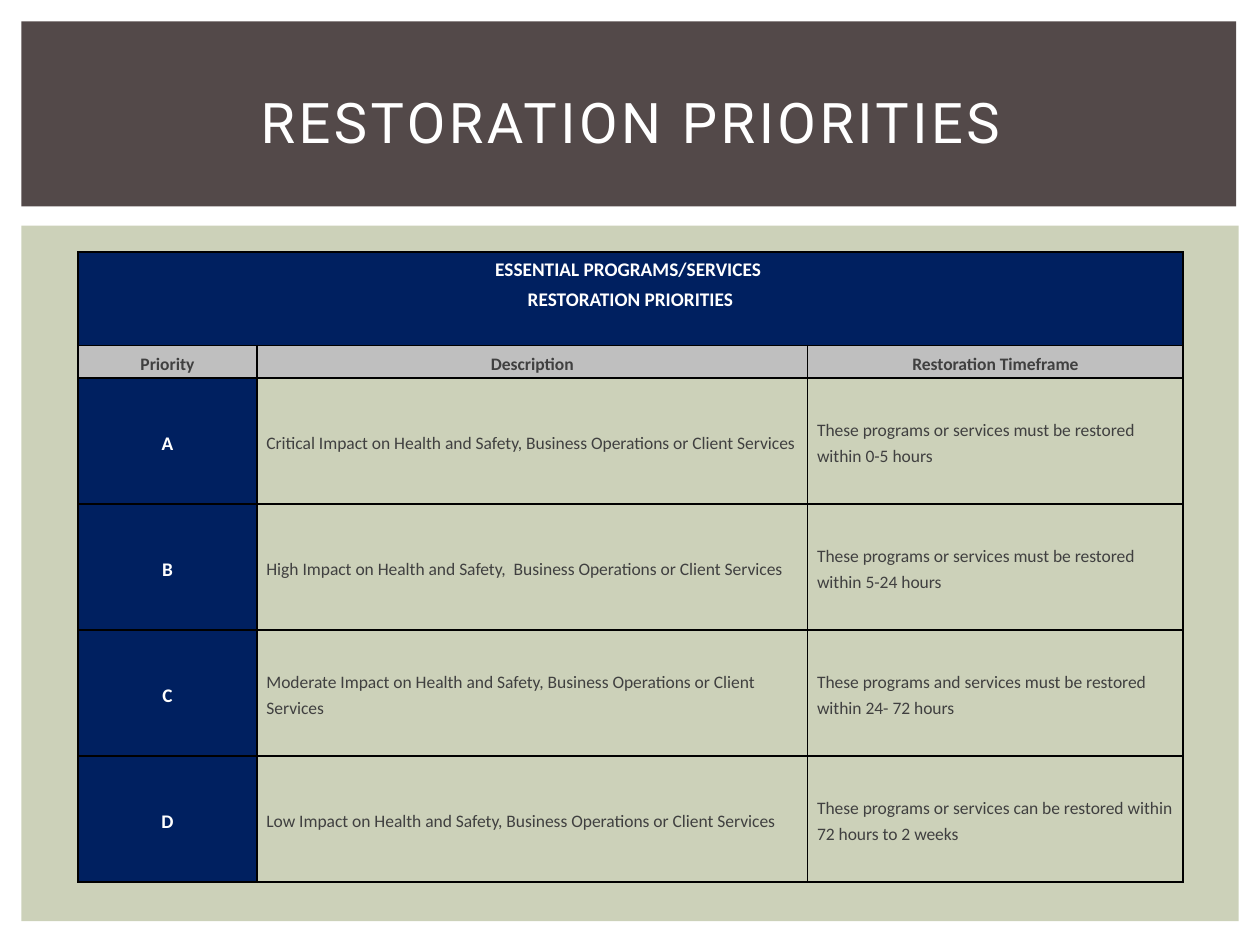
from lxml.etree import SubElement as Sub
from pptx import Presentation
from pptx.dml.color import RGBColor as RGB
from pptx.enum.shapes import MSO_SHAPE as Shape
from pptx.enum.text import MSO_ANCHOR as Anchor, PP_ALIGN as Align
from pptx.oxml.ns import qn
from pptx.util import Cm, Pt

WHITE = RGB(0xFF, 0xFF, 0xFF)
BROWN = RGB(0x53, 0x49, 0x49)
SAGE = RGB(0xCC, 0xD1, 0xB9)
NAVY = RGB(0x00, 0x20, 0x60)
SILVER = RGB(0xBF, 0xBF, 0xBF)
GREY = RGB(0x40, 0x40, 0x40)

COLS = (3.61, 11.1, 7.57)
ROWS = (1.88, 0.66, 2.54, 2.54, 2.54, 2.54)
BANNER = "ESSENTIAL PROGRAMS/SERVICES \vRESTORATION PRIORITIES"
HEADS = ("Priority", "Description", "Restoration Timeframe")
LEVELS = (
    ("A", "Critical Impact on Health and Safety, Business Operations or Client Services",
     "These programs or services must be restored within 0-5 hours"),
    ("B", "High Impact on Health and Safety,  Business Operations or Client Services",
     "These programs or services must be restored within 5-24 hours"),
    ("C", "Moderate Impact on Health and Safety, Business Operations or Client Services",
     "These programs and services must be restored within 24- 72 hours"),
    ("D", "Low Impact on Health and Safety, Business Operations or Client Services",
     "These programs or services can be restored within 72 hours to 2 weeks"),
)


def add_panel(slide, top, width, height, color):
    panel = slide.shapes.add_shape(
        Shape.RECTANGLE, Cm(0.43), Cm(top), Cm(width), Cm(height))
    panel.shadow.inherit = False
    panel.fill.solid()
    panel.fill.fore_color.rgb = color
    panel.line.fill.background()


def style_text(para, font, size, color, bold=False):
    for run in para.runs:
        run.font.name = font
        run.font.size = Pt(size)
        run.font.bold = bold
        run.font.color.rgb = color
    for gap in para._p.findall(qn("a:br")):
        Sub(gap, qn("a:rPr"), sz=str(size * 100))


def add_title(slide, text):
    box = slide.shapes.add_textbox(Cm(1.07), Cm(0.99), Cm(23.29), Cm(2.92))
    frame = box.text_frame
    frame.word_wrap = True
    frame.vertical_anchor = Anchor.MIDDLE
    frame.text = text
    para = frame.paragraphs[0]
    para.alignment = Align.CENTER
    style_text(para, "Roboto", 32, WHITE)
    para.runs[0].font._element.set("spc", "200")


def add_border(cell):
    props = cell._tc.get_or_add_tcPr()
    for side in ("lnL", "lnR", "lnT", "lnB"):
        line = Sub(props, qn("a:" + side), w=str(Pt(1)))
        fill = Sub(line, qn("a:solidFill"))
        Sub(fill, qn("a:srgbClr"), val="000000")


def fill_cell(cell, text, size, color, fill=None, space=0, anchor=Anchor.MIDDLE):
    cell.margin_left = cell.margin_right = Cm(0.19)
    cell.margin_top = cell.margin_bottom = 0
    cell.vertical_anchor = anchor
    if fill is None:
        cell.fill.background()
    else:
        cell.fill.solid()
        cell.fill.fore_color.rgb = fill
    para = cell.text_frame.paragraphs[0]
    para.text = text
    para.alignment = Align.LEFT if fill is None else Align.CENTER
    para.line_spacing = 1.25
    para.space_before = para.space_after = Pt(space)
    style_text(para, "Calibri", size, color, fill is not None)


def add_grid(slide):
    grid = slide.shapes.add_table(
        len(ROWS), len(COLS), Cm(1.57), Cm(5.08), Cm(sum(COLS)), Cm(sum(ROWS))).table
    grid.first_row = grid.horz_banding = False
    for col, width in zip(grid.columns, COLS):
        col.width = Cm(width)
    for row, height in zip(grid.rows, ROWS):
        row.height = Cm(height)
    for cell in grid.iter_cells():
        add_border(cell)
    grid.cell(0, 0).merge(grid.cell(0, len(COLS) - 1))
    fill_cell(grid.cell(0, 0), BANNER, 11, WHITE, NAVY, 2, Anchor.TOP)
    for col, head in enumerate(HEADS):
        fill_cell(grid.cell(1, col), head, 10, GREY, SILVER, 2)
    for row, (level, impact, time) in enumerate(LEVELS, 2):
        fill_cell(grid.cell(row, 0), level, 11, WHITE, NAVY, 6)
        fill_cell(grid.cell(row, 1), impact, 10, GREY)
        fill_cell(grid.cell(row, 2), time, 10, GREY)


def main():
    deck = Presentation()
    deck.slide_width, deck.slide_height = Cm(25.4), Cm(19.05)
    slide = deck.slides.add_slide(deck.slide_layouts[6])
    add_panel(slide, 4.55, 24.54, 14.02, SAGE)
    add_panel(slide, 0.43, 24.49, 3.73, BROWN)
    add_title(slide, "RESTORATION PRIORITIES")
    add_grid(slide)
    deck.save("out.pptx")


if __name__ == "__main__":
    main()
